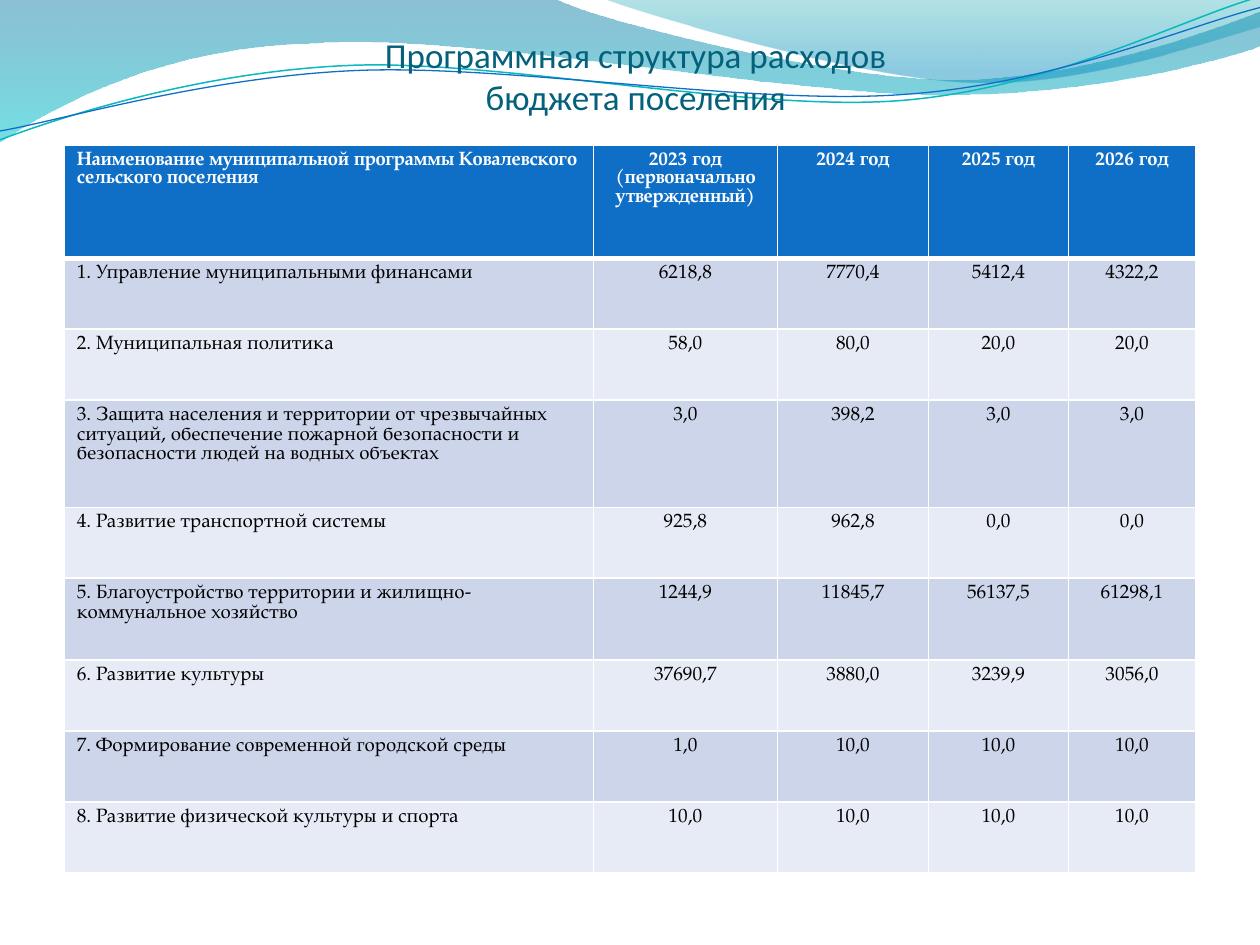
from lxml import etree
from pptx import Presentation
from pptx import util as u
from pptx.dml.color import RGBColor
from pptx.enum import text
from pptx.oxml.ns import qn

COLORS = {
    "white": "FFFFFF", "black": "000000", "title": "04617B",
    "header": "0F6FC6", "odd row": "CCD5EA", "even row": "E7EBF5",
    "sea": "0074A1", "cyan": "00C6CF", "teal": "00A1A9", "sky": "008BBF",
    "teal line": "0AB8BF", "blue line": "0F6FC6",
}


def rgb(name):
    return RGBColor.from_string(COLORS[name])


def add_outline(page, start, segments, closed):
    """Draw a freeform; a segment is one (x, y) or the three points of a Bezier curve."""
    builder = page.shapes.build_freeform(u.Inches(start[0]), u.Inches(start[1]))
    points = [(u.Inches(x), u.Inches(y)) for segment in segments for x, y in segment]
    builder.add_line_segments(points, close=closed)
    shape = builder.convert_to_shape()
    shape.shadow.inherit = False
    # Join each group of three straight steps into one cubic curve
    steps = iter(list(shape._element.spPr.iter(qn("a:lnTo"))))
    for segment in segments:
        group = [next(steps) for _ in segment]
        if len(group) == 3:
            curve = etree.Element(qn("a:cubicBezTo"))
            group[0].addprevious(curve)
            for step in group:
                curve.append(step[0])
                step.getparent().remove(step)
    return shape


deck = Presentation()
deck.slide_width, deck.slide_height = u.Inches(10), u.Inches(7.5)
page = deck.slides.add_slide(deck.slide_layouts[6])

# Waves: start, segments, gradient stops (position, colour, opacity in percent)
waves = [
    ((0, 0),
     [[(4.4, -0.01)],
      [(4.76, 0.17), (6.64, 0.63), (7.58, 0.63)],
      [(8.53, 0.63), (9.58, 0.26), (10, 0.09)],
      [(10.01, 0.36)],
      [(9.83, 0.44), (8.7, 0.76), (7.46, 0.75)],
      [(6.22, 0.75), (3.82, 0.28), (2.57, 0.34)],
      [(1.29, 0.36), (0.46, 0.83), (-0.01, 1.13)],
      [(0, 0)]],
     [(0, "sea", 45), (1, "cyan", 55)]),
    ((4.79, -0.01),
     [[(5.09, 0.11), (6.82, 0.62), (7.69, 0.65)],
      [(8.56, 0.69), (9.61, 0.32), (10, 0.21)],
      [(10, 0)],
      [(4.79, -0.01)]],
     [(0, "teal", 30), (0.8, "sky", 45)]),
]
for start, segments, stops in waves:
    wave = add_outline(page, start, segments, True)
    wave.line.fill.background()
    wave.fill.gradient()
    wave.fill.gradient_angle = 270
    for stop, (position, color, _) in zip(wave.fill.gradient_stops, stops):
        stop.position = position
        stop.color.rgb = rgb(color)
    for node, (_, _, opacity) in zip(wave._element.spPr.iter(qn("a:srgbClr")), stops):
        etree.SubElement(node, qn("a:alpha"), val=str(opacity * 1000))

strands = [
    ((0, 1.11),
     [[(0.48, 0.93), (1.58, 0.57), (2.77, 0.52)],
      [(3.95, 0.47), (5.93, 0.89), (7.13, 0.8)],
      [(8.33, 0.71), (9.38, 0.15), (9.98, -0.02)]], "teal line", 0.85),
    ((0, 1.04),
     [[(0.47, 0.96), (1.64, 0.61), (2.83, 0.56)],
      [(4.03, 0.51), (5.97, 0.84), (7.17, 0.75)],
      [(8.36, 0.67), (9.41, 0.21), (10, 0.06)]], "blue line", 0.75),
]
for start, segments, color, width in strands:
    strand = add_outline(page, start, segments, False)
    strand.fill.background()
    strand.line.color.rgb = rgb(color)
    strand.line.width = u.Pt(width)

# Title
box = page.shapes.add_textbox(u.Inches(2.8), u.Inches(0.21), u.Inches(4.49), u.Inches(0.72))
frame = box.text_frame
frame.word_wrap = True
frame.vertical_anchor = text.MSO_ANCHOR.BOTTOM
frame.margin_left = frame.margin_right = frame.margin_bottom = 0
frame.margin_top = u.Inches(0.05)
para = frame.paragraphs[0]
para.alignment = text.PP_ALIGN.CENTER
span = para.add_run()
span.text = "Программная структура расходов бюджета поселения"
span.font.name, span.font.size = "Calibri", u.Pt(20)
span.font.color.rgb = rgb("title")

# Spending table
rows = [
    ("Наименование муниципальной программы Ковалевского сельского поселения",
     "2023 год (первоначально\nутвержденный)", "2024 год", "2025 год", "2026 год"),
    ("1. Управление муниципальными финансами", "6218,8", "7770,4", "5412,4", "4322,2"),
    ("2. Муниципальная политика", "58,0", "80,0", "20,0", "20,0"),
    ("3. Защита населения и территории от чрезвычайных ситуаций, обеспечение "
     "пожарной безопасности и безопасности людей на водных объектах",
     "3,0", "398,2", "3,0", "3,0"),
    ("4. Развитие транспортной системы", "925,8", "962,8", "0,0", "0,0"),
    ("5. Благоустройство территории и жилищно-коммунальное хозяйство",
     "1244,9", "11845,7", "56137,5", "61298,1"),
    ("6. Развитие культуры", "37690,7", "3880,0", "3239,9", "3056,0"),
    ("7. Формирование современной городской среды", "1,0", "10,0", "10,0", "10,0"),
    ("8. Развитие физической культуры и спорта", "10,0", "10,0", "10,0", "10,0"),
]
column_widths = [4.2, 1.46, 1.2, 1.11, 1.01]
table_height = 5.78
tall_rows = {0: 0.9, 3: 0.85, 5: 0.65}
plain_height = (table_height - sum(tall_rows.values())) / (len(rows) - len(tall_rows))

table = page.shapes.add_table(len(rows), len(column_widths), u.Inches(0.51), u.Inches(1.15),
                              u.Inches(sum(column_widths)), u.Inches(table_height)).table
for column, width in zip(table.columns, column_widths):
    column.width = u.Inches(width)

for r, values in enumerate(rows):
    table.rows[r].height = u.Inches(tall_rows.get(r, plain_height))
    is_header = r == 0
    fill = "header" if is_header else "odd row" if r % 2 else "even row"
    for c, value in enumerate(values):
        cell = table.cell(r, c)
        properties = cell._tc.get_or_add_tcPr()
        for side in "LRTB":
            under_header = (r, side) in ((0, "B"), (1, "T"))
            border = etree.SubElement(properties, qn(f"a:ln{side}"),
                                      w=str(u.Pt(3 if under_header else 1)))
            paint = etree.SubElement(border, qn("a:solidFill"))
            etree.SubElement(paint, qn("a:srgbClr"), val=COLORS["white"])
        cell.fill.solid()
        cell.fill.fore_color.rgb = rgb(fill)
        for i, line in enumerate(value.split("\n")):
            para = cell.text_frame.paragraphs[0] if i == 0 else cell.text_frame.add_paragraph()
            para.alignment = text.PP_ALIGN.CENTER if c else text.PP_ALIGN.LEFT
            span = para.add_run()
            span.text = line
            span.font.name, span.font.size = "TeX Gyre Pagella", u.Pt(11)
            span.font.bold = is_header
            span.font.color.rgb = rgb("white" if is_header else "black")

deck.save("out.pptx")
